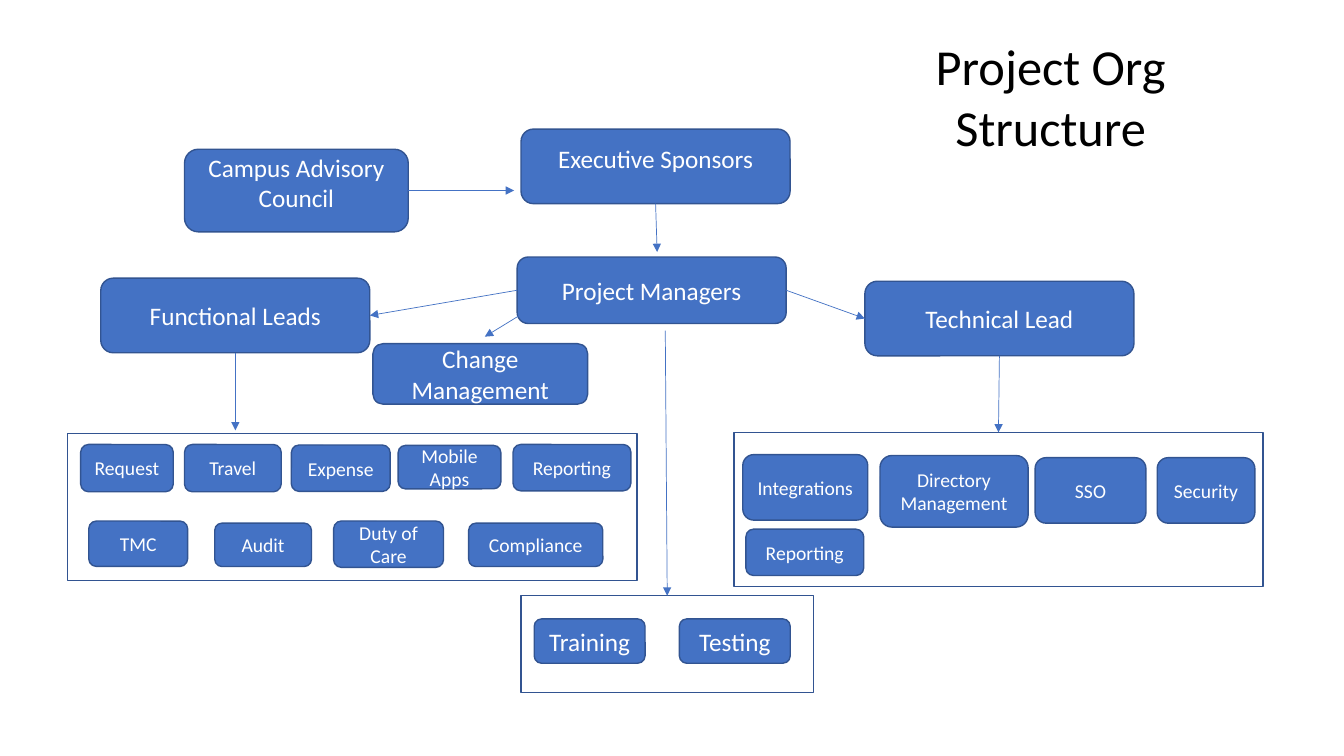
from dataclasses import dataclass

from pptx import Presentation
from pptx import util as u
from pptx.dml.color import RGBColor
from pptx.enum import shapes, text
from pptx.oxml.ns import qn
from lxml import etree


@dataclass(frozen=True)
class Theme:
    font: str = "Calibri"
    box: str = "4472C4"
    outline: str = "325491"
    paper: str = "FFFFFF"
    ink: str = "000000"
    title_size: int = 36
    role_size: int = 18
    task_size: int = 14
    outline_width: float = 1
    arrow_width: float = 0.5


THEME = Theme()
TOP, LEFT, BOTTOM, RIGHT = range(4)

# Boxes: left, top, width, height in points
PANELS = {
    "functional": (48.2, 309.6, 406.8, 105.1),
    "technical": (524.2, 308.9, 378, 110.2),
    "support": (372.2, 425.5, 208.8, 69.1),
}
ROLES = {
    "Project Managers": (369.4, 183.6, 192.2, 47.5),
    "Functional Leads": (72, 198.7, 192.2, 53.3),
    "Technical Lead": (617.8, 200.9, 192.2, 53.3),
    "Change Management": (266.4, 245.5, 153.4, 43.2),
    "Training": (381.6, 442.1, 79.2, 31.7),
    "Testing": (485.3, 442.1, 79.2, 31.7),
}
# Roles whose text sits a little above the middle
RAISED_ROLES = {
    "Campus Advisory Council": (131.8, 106.6, 159.8, 59),
    "Executive Sponsors": (372.2, 92.2, 192.2, 53.3),
}
TASKS = [
    # Functional, first row
    ("Request", 57.6, 317.5, 66.2, 33.8),
    ("Travel", 131.8, 317.5, 69.1, 33.8),
    ("Expense", 208.1, 317.9, 70.6, 33.1),
    ("Mobile Apps", 284.4, 318.2, 73.4, 31),
    ("Reporting", 366.5, 317.5, 84.2, 33.1),
    # Functional, second row
    ("TMC", 63.4, 372.2, 70.6, 32.4),
    ("Audit", 153.4, 373.7, 69.1, 31),
    ("Duty of Care", 238.3, 372.2, 78.5, 33.1),
    ("Compliance", 334.8, 373.7, 95.8, 31),
    # Technical
    ("Integrations", 530.6, 324.7, 89.3, 46.8),
    ("Directory Management", 628.6, 325.4, 105.8, 51.1),
    ("SSO", 739.4, 326.9, 79.2, 46.8),
    ("Security", 826.6, 326.9, 69.8, 46.8),
    ("Reporting", 532.8, 378, 84.2, 33.1),
]


def write(sp, words, *, size, color, anchor=text.MSO_ANCHOR.MIDDLE):
    """Fill a shape with one centred, formatted paragraph."""
    tf = sp.text_frame
    tf.word_wrap = True
    tf.vertical_anchor = anchor
    p = tf.paragraphs[0]
    p.alignment = text.PP_ALIGN.CENTER
    r = p.add_run()
    r.text = words
    r.font.name = THEME.font
    r.font.size = u.Pt(size)
    r.font.color.rgb = RGBColor.from_string(color)


def add_block(s, kind, bounds, fill):
    sp = s.shapes.add_shape(kind, *map(u.Pt, bounds))
    sp.shadow.inherit = False
    sp.fill.solid()
    sp.fill.fore_color.rgb = RGBColor.from_string(fill)
    sp.line.color.rgb = RGBColor.from_string(THEME.outline)
    sp.line.width = u.Pt(THEME.outline_width)
    return sp


def add_panel(s, bounds):
    return add_block(s, shapes.MSO_SHAPE.RECTANGLE, bounds, THEME.paper)


def add_box(s, words, bounds, size, raised=False):
    sp = add_block(s, shapes.MSO_SHAPE.ROUNDED_RECTANGLE, bounds, THEME.box)
    write(sp, words, size=size, color=THEME.paper)
    if raised:
        sp.text_frame.margin_top = u.Pt(0)
        sp.text_frame.margin_bottom = u.Pt(12)
    return sp


def add_arrow(s, start, end):
    """Each end is either an (x, y) point or a (shape, side) pair."""
    line = s.shapes.add_connector(shapes.MSO_CONNECTOR.STRAIGHT, 0, 0, 0, 0)
    # Free ends first, so that joined ends are measured from them
    if isinstance(start[0], (int, float)):
        line.begin_x, line.begin_y = map(u.Pt, start)
    else:
        line.begin_connect(*start)
    if isinstance(end[0], (int, float)):
        line.end_x, line.end_y = map(u.Pt, end)
    else:
        line.end_connect(*end)
    line.line.color.rgb = RGBColor.from_string(THEME.box)
    line.line.width = u.Pt(THEME.arrow_width)
    sp_pr = line.line._get_or_add_ln().getparent()
    etree.SubElement(sp_pr.find(qn("a:ln")), qn("a:tailEnd"), type="triangle")
    etree.SubElement(sp_pr, qn("a:effectLst"))


def add_title(s, words, bounds):
    sp = s.shapes.title
    sp.left, sp.top, sp.width, sp.height = map(u.Pt, bounds)
    write(sp, words, size=THEME.title_size, color=THEME.ink,
          anchor=text.MSO_ANCHOR.TOP)
    sp.text_frame.auto_size = text.MSO_AUTO_SIZE.SHAPE_TO_FIT_TEXT


def main():
    prs = Presentation()
    prs.slide_width, prs.slide_height = u.Pt(960), u.Pt(540)
    s = prs.slides.add_slide(prs.slide_layouts[5])

    add_title(s, "Project Org Structure", (617, 21.6, 267.1, 94.3))

    # Panels, then the boxes on top of them
    panels = {name: add_panel(s, bounds) for name, bounds in PANELS.items()}
    roles = {name: add_box(s, name, bounds, THEME.role_size)
             for name, bounds in ROLES.items()}
    for name, bounds in RAISED_ROLES.items():
        roles[name] = add_box(s, name, bounds, THEME.role_size, raised=True)
    for name, *bounds in TASKS:
        add_box(s, name, bounds, THEME.task_size)

    # Reporting lines
    managers = roles["Project Managers"]
    functional, technical = roles["Functional Leads"], roles["Technical Lead"]
    for start, end in [
        ((roles["Campus Advisory Council"], RIGHT), (367.2, 136.1)),
        ((roles["Executive Sponsors"], BOTTOM), (469.4, 180)),
        ((managers, LEFT), (functional, RIGHT)),
        ((managers, RIGHT), (technical, LEFT)),
        ((381.6, 218.9), (346.3, 240.5)),
        ((475.2, 236.2), (panels["support"], TOP)),
        ((functional, BOTTOM), (168.1, 307.4)),
        ((technical, BOTTOM), (panels["technical"], TOP)),
    ]:
        add_arrow(s, start, end)

    prs.save("out.pptx")


if __name__ == "__main__":
    main()
